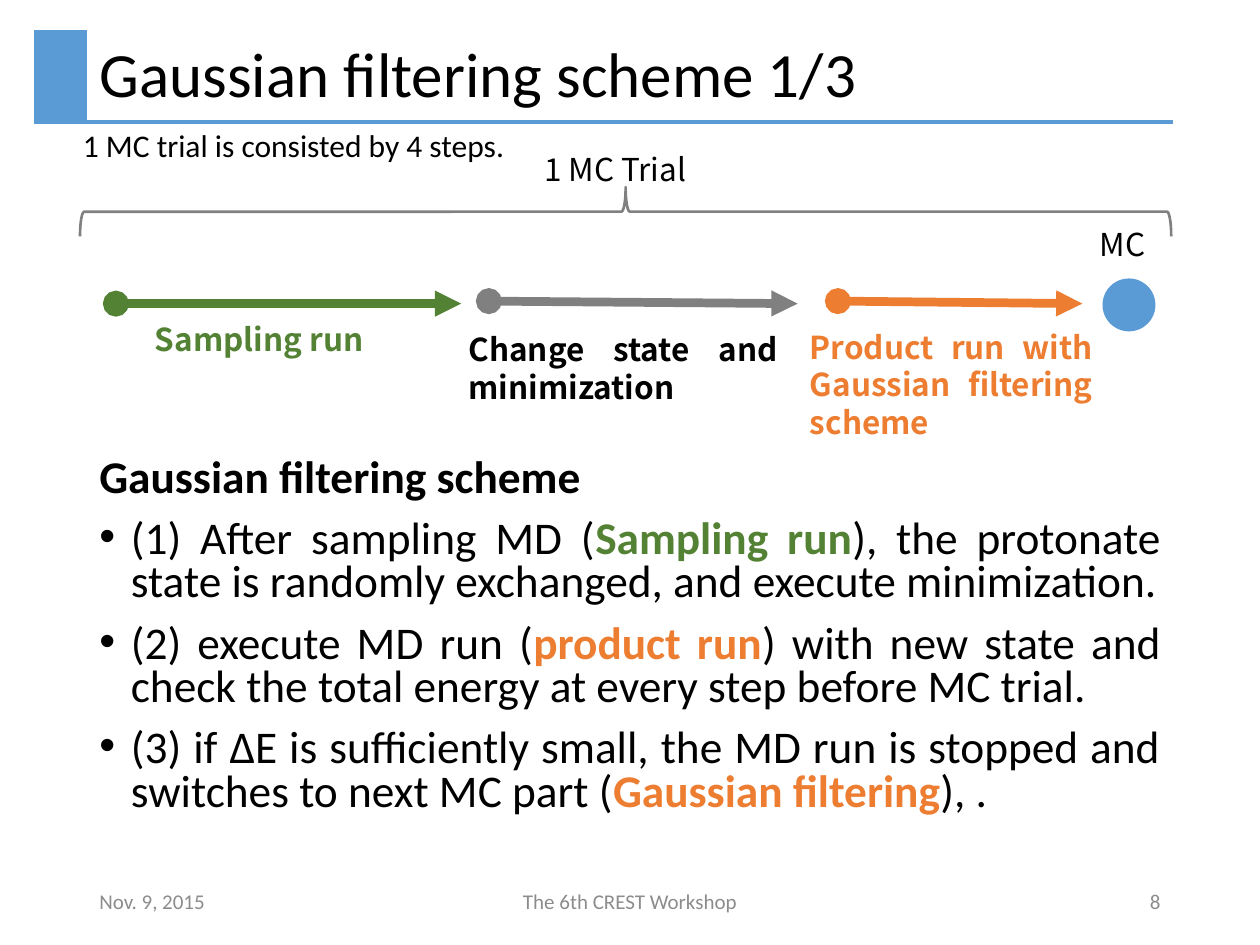
"""Build the slide on the Gaussian filtering scheme."""
import pptx
import pptx.dml.color
import pptx.enum.shapes
import pptx.enum.text
import pptx.oxml
import pptx.oxml.ns
import pptx.util

Inches = pptx.util.Inches
SHAPES = pptx.enum.shapes.MSO_SHAPE
ALIGN = pptx.enum.text.PP_ALIGN
ANCHOR = pptx.enum.text.MSO_ANCHOR

BLACK, BLUE, GREEN = "000000", "5B9BD5", "548235"
ORANGE, GRAY, FOOTER_GRAY = "ED7D31", "808080", "8C8C8C"
DIAGRAM_FONT = "Noto Sans CJK JP"

TITLE = "Gaussian filtering scheme 1/3"
INTRO = "1 MC trial is consisted by 4 steps."
SCHEME_HEADING = [[("Gaussian filtering scheme", BLACK, True)]]
SCHEME_STEPS = [
    [("(1) After sampling MD (",), ("Sampling run", GREEN, True),
     ("), the protonate state is randomly exchanged, and execute minimization.",)],
    [("(2) execute MD run (",), ("product run", ORANGE, True),
     (") with new state and check the total energy at every step before MC trial.",)],
    [("(3) if ∆E is sufficiently small, the MD run is stopped and switches to next MC part (",),
     ("Gaussian filtering", ORANGE, True), ("), .",)],
]
FOOTERS = [
    ("Nov. 9, 2015", 0.69, 2.25, ALIGN.LEFT),
    ("The 6th CREST Workshop", 3.31, 3.38, ALIGN.CENTER),
    ("8", 7.06, 2.25, ALIGN.RIGHT),
]
RUN_ARROWS = [
    ((0.92, 2.41), (3.66, 2.41), GREEN),
    ((3.88, 2.39), (6.33, 2.41), GRAY),
    ((6.65, 2.39), (8.59, 2.41), ORANGE),
]
DIAGRAM_LABELS = [
    ("Sampling run", (1.13, 2.49, 2.69, 0.4), GREEN, True),
    ("Change state and minimization", (3.62, 2.57, 2.65, 0.71), BLACK, True),
    ("Product run with Gaussian filtering scheme", (6.33, 2.55, 2.44, 1.01), ORANGE, True),
    ("MC", (8.63, 1.74, 0.64, 0.4), BLACK, False),
    ("1 MC Trial", (4.22, 1.14, 1.45, 0.4), BLACK, False),
]


def rgb(color):
    """Turn a hex string into a colour."""
    return pptx.dml.color.RGBColor.from_string(color)


def place(shape, box):
    """Set the left, top, width and height of a shape in inches."""
    shape.left, shape.top, shape.width, shape.height = map(Inches, box)


def add_bullet(paragraph):
    """Give a paragraph a hanging bullet."""
    properties = paragraph._p.get_or_add_pPr()
    properties.set("marL", str(Inches(0.25)))
    properties.set("indent", str(-Inches(0.25)))
    namespace = pptx.oxml.ns.nsdecls("a")
    for bullet in ('<a:buFont {} typeface="Arial"/>', '<a:buChar {} char="•"/>'):
        properties.append(pptx.oxml.parse_xml(bullet.format(namespace)))


def write(frame, paragraphs, size=18, font="Calibri", color=BLACK, bold=False, align=ALIGN.LEFT,
          anchor=ANCHOR.TOP, spacing=None, before=0, bulleted=()):
    """Fill a text frame from a string or from lists of (text, colour, bold) runs."""
    if isinstance(paragraphs, str):
        paragraphs = [[(paragraphs, color, bold)]]
    frame.word_wrap = True
    frame.auto_size = pptx.enum.text.MSO_AUTO_SIZE.NONE
    frame.vertical_anchor = anchor
    for index, pieces in enumerate(paragraphs):
        paragraph = frame.add_paragraph() if index else frame.paragraphs[0]
        paragraph.alignment = align
        paragraph.space_before = pptx.util.Pt(before)
        if spacing:
            paragraph.line_spacing = spacing
        if index in bulleted:
            add_bullet(paragraph)
        for text, *style in pieces:
            run_color, run_bold = style or (color, bold)
            run = paragraph.add_run()
            run.text = text
            run.font.size = pptx.util.Pt(size)
            run.font.name = font
            run.font.bold = run_bold
            run.font.color.rgb = rgb(run_color)


def add_text(slide, box, paragraphs, **style):
    """Add a text box."""
    write(slide.shapes.add_textbox(*map(Inches, box)).text_frame, paragraphs, **style)


def add_solid(slide, kind, box, color):
    """Add a filled shape without an outline."""
    solid = slide.shapes.add_shape(kind, *map(Inches, box))
    solid.shadow.inherit = False
    solid.fill.solid()
    solid.fill.fore_color.rgb = rgb(color)
    solid.line.fill.background()


def add_line(slide, start, end, color, width, arrow=False):
    """Add a straight line, with a round start and an arrow tip if asked."""
    line = slide.shapes.add_connector(
        pptx.enum.shapes.MSO_CONNECTOR.STRAIGHT, *map(Inches, start + end))
    line.line.color.rgb = rgb(color)
    line.line.width = pptx.util.Pt(width)
    namespace = pptx.oxml.ns.nsdecls("a")
    if arrow:
        for tag, kind in (("headEnd", "oval"), ("tailEnd", "triangle")):
            line.line._get_or_add_ln().append(
                pptx.oxml.parse_xml(f'<a:{tag} {namespace} type="{kind}"/>'))
    line._element.spPr.append(pptx.oxml.parse_xml(f"<a:effectLst {namespace}/>"))


def add_trial_brace(slide):
    """Add the brace that spans the whole trial."""
    brace = slide.shapes.add_shape(SHAPES.LEFT_BRACE, *map(Inches, (4.77, -2.65, 0.39, 8.66)))
    brace.rotation = 90
    brace.shadow.inherit = False
    brace.fill.background()
    brace.line.color.rgb = rgb(GRAY)
    brace.line.width = pptx.util.Pt(1.5)


def main():
    """Build and save the slide."""
    deck = pptx.Presentation()
    deck.slide_width, deck.slide_height = Inches(10), Inches(7.5)
    slide = deck.slides.add_slide(deck.slide_layouts.get_by_name("Title Only"))

    place(slide.shapes.title, (0.69, 0.24, 8.62, 0.74))
    write(slide.shapes.title.text_frame, TITLE, size=36, anchor=ANCHOR.MIDDLE, spacing=0.9)
    add_text(slide, (0.69, 3.59, 8.62, 3.17), SCHEME_HEADING + SCHEME_STEPS, size=25.9,
             align=ALIGN.JUSTIFY, spacing=0.8, before=10, bulleted=(1, 2, 3))
    for text, left, width, align in FOOTERS:
        add_text(slide, (left, 6.95, width, 0.4), text, size=12, color=FOOTER_GRAY,
                 align=align, anchor=ANCHOR.MIDDLE)

    add_solid(slide, SHAPES.RECTANGLE, (0.27, 0.24, 0.42, 0.74), BLUE)
    add_line(slide, (0.27, 0.97), (9.31, 0.97), BLUE, 2)

    for start, end, color in RUN_ARROWS:
        add_line(slide, start, end, color, 5, arrow=True)
    add_solid(slide, SHAPES.OVAL, (8.75, 2.21, 0.42, 0.42), BLUE)
    add_trial_brace(slide)
    for text, box, color, bold in DIAGRAM_LABELS:
        add_text(slide, box, text, font=DIAGRAM_FONT, color=color, bold=bold, align=ALIGN.JUSTIFY)
    add_text(slide, (0.56, 0.95, 8.92, 0.4), INTRO)

    deck.save("out.pptx")


if __name__ == "__main__":
    main()
